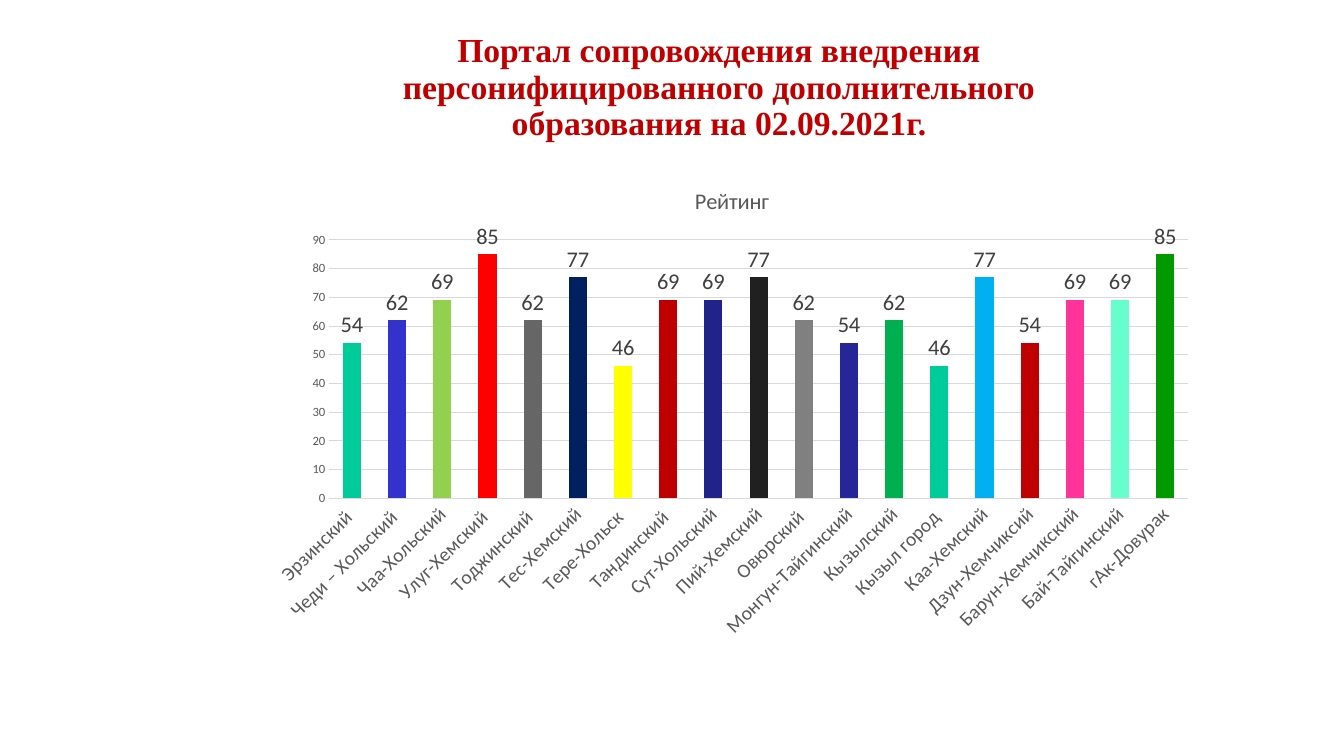
from dataclasses import dataclass

from pptx import Presentation
from pptx.chart.data import CategoryChartData
from pptx.dml.color import RGBColor
from pptx.enum.chart import XL_CHART_TYPE as ChartType
from pptx.enum.chart import XL_LABEL_POSITION as LabelSpot
from pptx.enum.chart import XL_TICK_MARK as Tick
from pptx.enum.text import MSO_ANCHOR as Anchor
from pptx.enum.text import MSO_AUTO_SIZE as Fit
from pptx.enum.text import PP_ALIGN as Align
from pptx.util import Inches, Pt


@dataclass(frozen=True)
class Theme:
    head_font: str = "Times New Roman"
    font: str = "Calibri"
    head: str = "C00000"
    text: str = "595959"
    label: str = "404040"
    grid: str = "D9D9D9"
    head_size: int = 24
    big: int = 16
    mid: int = 14
    small: int = 9


THEME = Theme()

TITLE = ("Портал сопровождения внедрения персонифицированного "
         "дополнительного образования на 02.09.2021г.")

# District, rating, bar colour
RATINGS = [
    ("Эрзинский ", 54, "00CC99"),
    ("Чеди – Хольский ", 62, "3333CC"),
    ("Чаа-Хольский", 69, "92D050"),
    ("Улуг-Хемский ", 85, "FF0000"),
    ("Тоджинский ", 62, "666666"),
    ("Тес-Хемский", 77, "002060"),
    ("Тере-Хольск ", 46, "FFFF00"),
    ("Тандинский ", 69, "C00000"),
    ("Сут-Хольский", 69, "22228B"),
    ("Пий-Хемский", 77, "202020"),
    ("Овюрский ", 62, "808080"),
    ("Монгун-Тайгинский", 54, "262699"),
    ("Кызылский", 62, "00B050"),
    ("Кызыл город ", 46, "00CC99"),
    ("Каа-Хемский", 77, "00B0F0"),
    ("Дзун-Хемчиксий", 54, "C00000"),
    ("Барун-Хемчикский", 69, "FF3399"),
    ("Бай-Тайгинский", 69, "66FFCC"),
    ("гАк-Довурак", 85, "009900"),
]


def style(font, size, color, name=THEME.font, bold=False):
    font.name = name
    font.size = Pt(size)
    font.bold = bold
    font.color.rgb = RGBColor.from_string(color)


def set_title(slide, text):
    title = slide.shapes.title
    title.left, title.top = Inches(2.96), Inches(0.3)
    title.width, title.height = Inches(8.34), Inches(1.15)
    frame = title.text_frame
    frame.text = text
    frame.word_wrap = True
    frame.auto_size = Fit.NONE
    frame.vertical_anchor = Anchor.MIDDLE
    para = frame.paragraphs[0]
    para.alignment = Align.CENTER
    para.line_spacing = 0.9
    style(para.runs[0].font, THEME.head_size, THEME.head, THEME.head_font, True)


def style_axis(axis, size):
    axis.major_tick_mark = axis.minor_tick_mark = Tick.NONE
    axis.format.line.fill.background()
    style(axis.tick_labels.font, size, THEME.text)


def style_axes(chart):
    names, scale = chart.category_axis, chart.value_axis
    style_axis(names, THEME.mid)
    names._element.txPr.bodyPr.set("rot", "-2700000")
    style_axis(scale, THEME.small)
    scale.minimum_scale, scale.maximum_scale, scale.major_unit = 0, 90, 10
    grid = scale.major_gridlines.format.line
    grid.color.rgb = RGBColor.from_string(THEME.grid)
    grid.width = Pt(0.75)


def style_bars(plot):
    plot.gap_width = 150
    plot.vary_by_categories = False
    plot.has_data_labels = True
    labels = plot.data_labels
    labels.show_value = True
    labels.position = LabelSpot.OUTSIDE_END
    style(labels.font, THEME.big, THEME.label)
    for i, (_, _, color) in enumerate(RATINGS):
        fill = plot.series[0].points[i].format.fill
        fill.solid()
        fill.fore_color.rgb = RGBColor.from_string(color)


def add_ratings(slide):
    data = CategoryChartData()
    data.categories = [name for name, _, _ in RATINGS]
    data.add_series("Рейтинг", [score for _, score, _ in RATINGS])
    chart = slide.shapes.add_chart(
        ChartType.COLUMN_CLUSTERED, Inches(2.55), Inches(1.66),
        Inches(9.42), Inches(4.77), data).chart
    chart.has_legend = False
    chart.font.name = THEME.font
    chart.font.size = Pt(10)
    chart.has_title = True
    frame = chart.chart_title.text_frame
    frame.text = "Рейтинг"
    style(frame.paragraphs[0].runs[0].font, THEME.big, THEME.text)
    chart.chart_title.include_in_layout = False
    style_axes(chart)
    style_bars(chart.plots[0])


def main():
    deck = Presentation()
    deck.slide_width, deck.slide_height = Inches(13.33), Inches(7.5)
    slide = deck.slides.add_slide(deck.slide_layouts[5])
    set_title(slide, TITLE)
    add_ratings(slide)
    deck.save("out.pptx")


if __name__ == "__main__":
    main()
